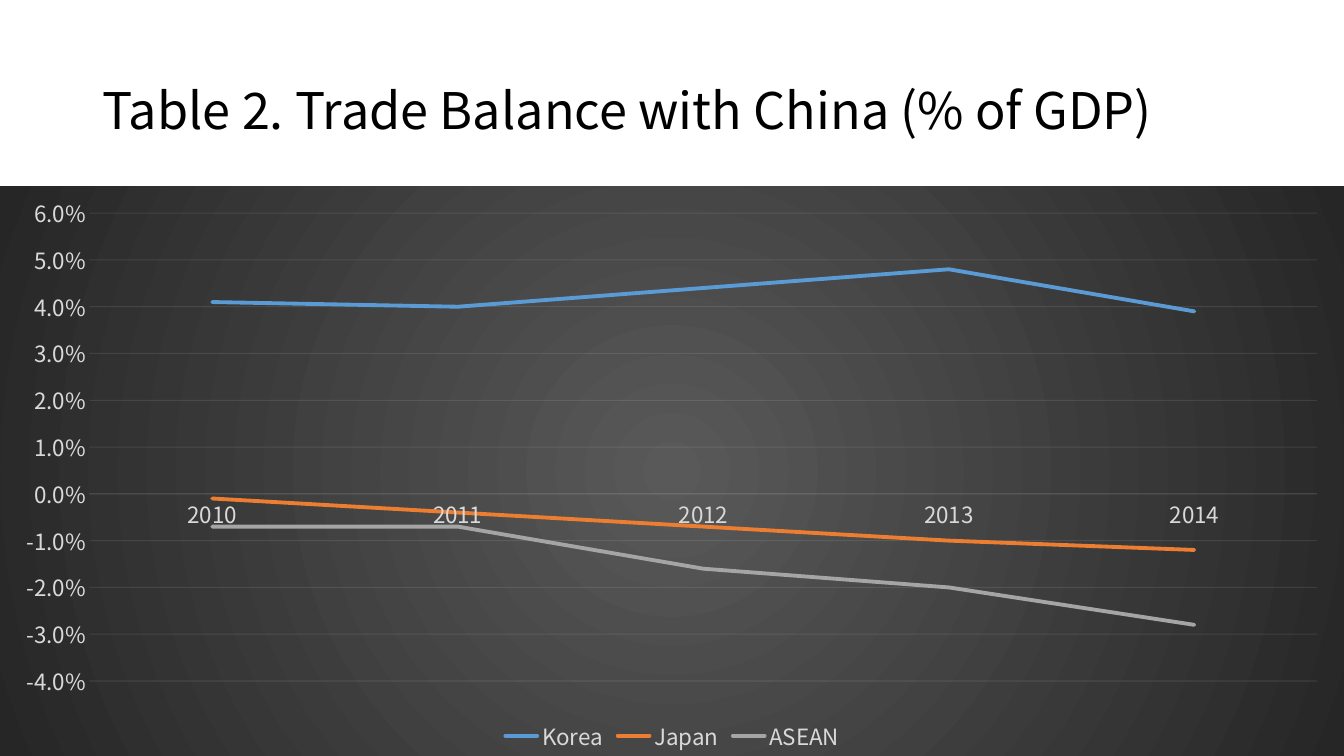
"""Build a slide with a title and a line chart of trade balances with China."""
import lxml.etree
import pptx
import pptx.chart.data
import pptx.dml.color
import pptx.enum.chart
import pptx.enum.text
import pptx.oxml
import pptx.oxml.ns
import pptx.util

TITLE = "Table 2. Trade Balance with China (% of GDP)"
YEARS = ["2010", "2011", "2012", "2013", "2014"]
BALANCES = {
    "Korea": (0.041, 0.04, 0.044, 0.048, 0.039),
    "Japan": (-0.001, -0.004, -0.007, -0.01, -0.012),
    "ASEAN": (-0.007, -0.007, -0.016, -0.02, -0.028),
}
COLORS = {
    "Korea": "5B9BD5", "Japan": "ED7D31", "ASEAN": "A5A5A5",
    "title": "000000", "label": "D9D9D9", "rule": "F2F2F2",
    "center": "595959", "edge": "262626",
}
FONT = "Noto Sans CJK KR"
PX = 914400 / 100.8
SLIDE_SIZE = (1344, 756)
TITLE_BOX = (93, 40, 1159, 146)
CHART_BOX = (0, 186, 1344, 570)
SCALE = {"minimum_scale": -0.04, "maximum_scale": 0.06, "major_unit": 0.01}
LEGEND = {"position": pptx.enum.chart.XL_LEGEND_POSITION.BOTTOM, "include_in_layout": False}
FRAME = {"word_wrap": True, "vertical_anchor": pptx.enum.text.MSO_ANCHOR.MIDDLE}
BACKGROUND = f"""<c:spPr {pptx.oxml.ns.nsdecls("c", "a")}>
  <a:gradFill><a:gsLst>
    <a:gs pos="0"><a:srgbClr val="{COLORS['center']}"/></a:gs>
    <a:gs pos="100000"><a:srgbClr val="{COLORS['edge']}"/></a:gs>
  </a:gsLst><a:path path="circle">
    <a:fillToRect l="50000" t="50000" r="50000" b="50000"/>
  </a:path></a:gradFill><a:ln><a:noFill/></a:ln>
</c:spPr>"""


def emu(lengths):
    return [round(length * PX) for length in lengths]


def apply(target, values):
    for name, value in values.items():
        setattr(target, name, value)


def style_font(font, size, color):
    apply(font, {"name": FONT, "size": pptx.util.Pt(size), "bold": False})
    font.color.rgb = pptx.dml.color.RGBColor.from_string(COLORS[color])


def style_line(line, width, color):
    line.width = pptx.util.Pt(width)
    line.color.rgb = pptx.dml.color.RGBColor.from_string(COLORS[color])


def style_rule(line_format, element):
    style_line(line_format, 0.75, "rule")
    for color in element.xpath("./c:spPr/a:ln/a:solidFill/a:srgbClr"):
        lxml.etree.SubElement(color, pptx.oxml.ns.qn("a:alpha"), val="10000")


def add_title(page):
    frame = page.shapes.add_textbox(*emu(TITLE_BOX)).text_frame
    apply(frame, FRAME)
    para = frame.paragraphs[0]
    para.line_spacing = 0.9
    span = para.add_run()
    span.text = TITLE
    style_font(span.font, 36, "title")


def add_balance_chart(page):
    data = pptx.chart.data.CategoryChartData(number_format="0.0%")
    data.categories = YEARS
    for name, values in BALANCES.items():
        data.add_series(name, values)
    kind = pptx.enum.chart.XL_CHART_TYPE.LINE
    chart = page.shapes.add_chart(kind, *emu(CHART_BOX), data).chart
    apply(chart, {"has_title": False, "has_legend": True})
    style_font(chart.font, 10, "title")
    apply(chart.legend, LEGEND)
    style_font(chart.legend.font, 16, "label")
    chart.plots[0].vary_by_categories = False
    for series in chart.plots[0].series:
        series.smooth = False
        series.marker.style = pptx.enum.chart.XL_MARKER_STYLE.NONE
        style_line(series.format.line, 2.75, series.name)
        series.format.line._get_or_add_ln().set("cap", "rnd")

    years, shares = chart.category_axis, chart.value_axis
    for axis in (years, shares):
        axis.major_tick_mark = axis.minor_tick_mark = pptx.enum.chart.XL_TICK_MARK.NONE
        style_font(axis.tick_labels.font, 16, "label")
    style_rule(years.format.line, years._element)
    apply(shares, SCALE)
    apply(shares.tick_labels, {"number_format": "0.0%", "number_format_is_linked": False})
    shares.format.line.fill.background()
    grid = shares.major_gridlines
    style_rule(grid.format.line, shares._element.xpath("./c:majorGridlines")[0])
    chart._chartSpace.chart.addnext(pptx.oxml.parse_xml(BACKGROUND))


def main():
    deck = pptx.Presentation()
    deck.slide_width, deck.slide_height = emu(SLIDE_SIZE)
    page = deck.slides.add_slide(deck.slide_layouts[6])
    add_title(page)
    add_balance_chart(page)
    deck.save("out.pptx")


if __name__ == "__main__":
    main()
